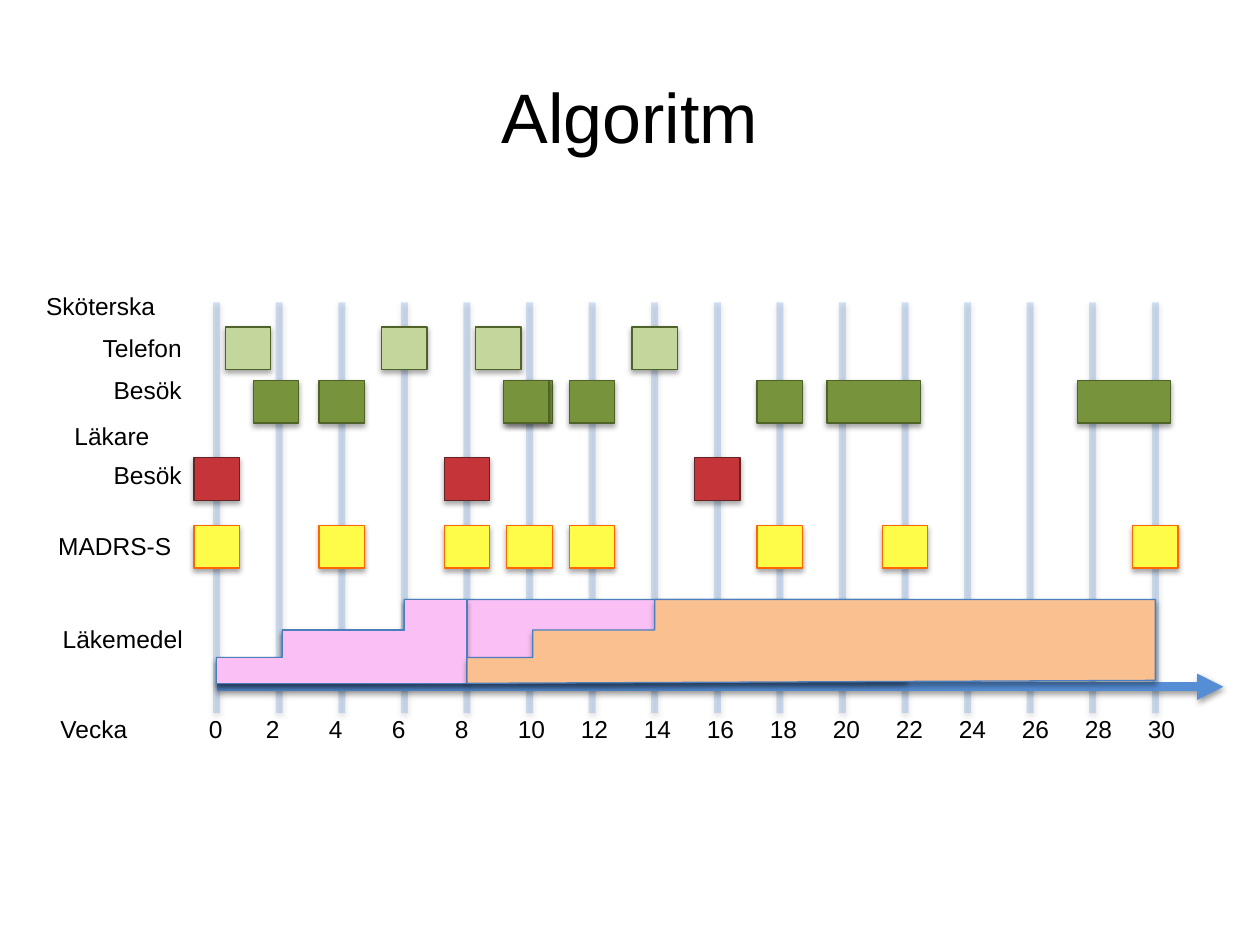
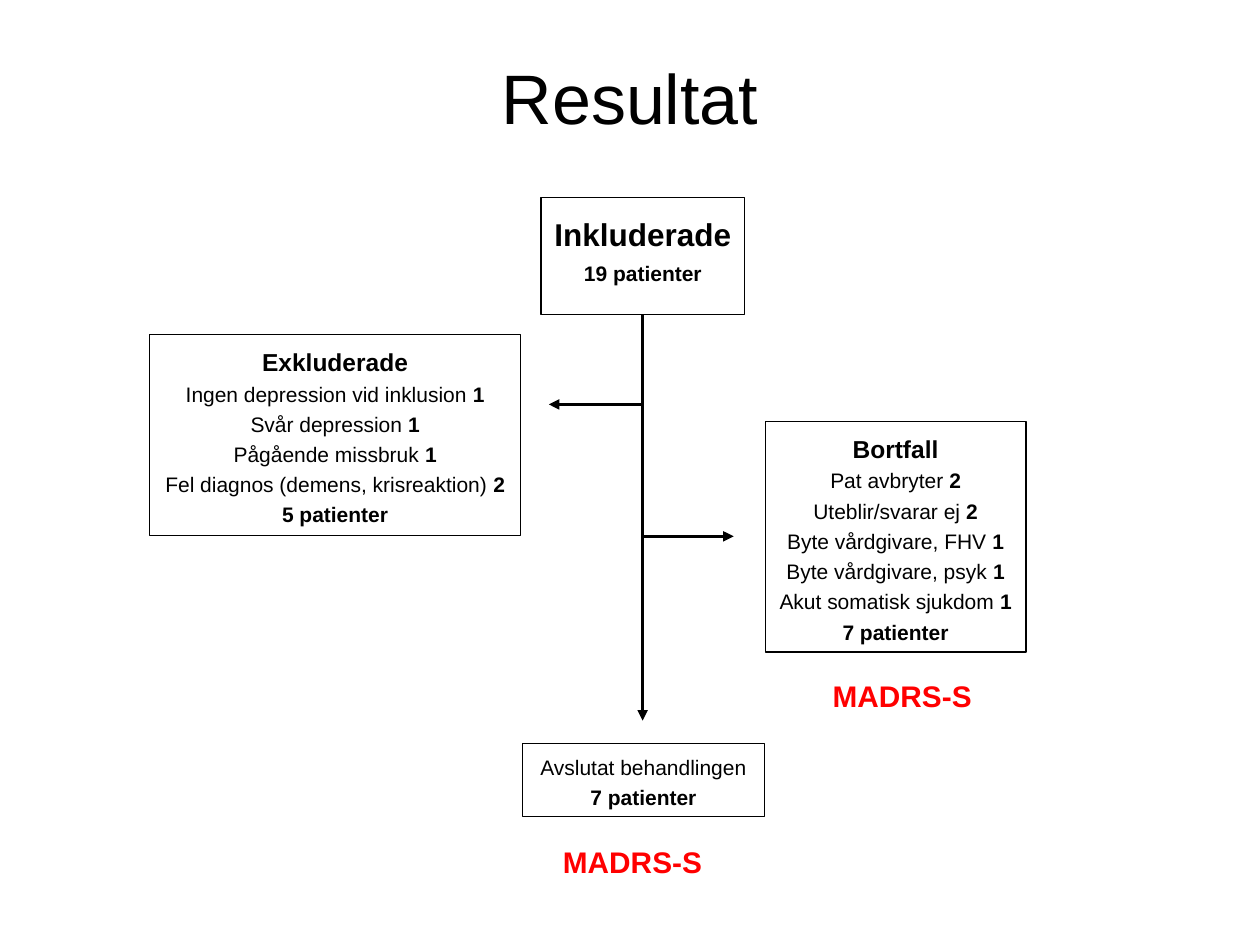
from lxml.etree import SubElement
from pptx import Presentation
from pptx.dml.color import RGBColor
from pptx.enum.shapes import MSO_CONNECTOR as Connector, MSO_SHAPE as Preset
from pptx.enum.text import PP_ALIGN as Align
from pptx.oxml.ns import qn
from pptx.util import Pt

COLORS = {
    "black": "000000", "red": "FF0000", "blue": "558ED5", "outline": "4B7EBC",
    "phone": "C3D69B", "nurse": "77933C", "nurse edge": "4F6228",
    "doctor": "C43439", "doctor edge": "632523",
    "scale": "FFFC49", "scale edge": "FF6600",
    "first drug": "FAC0F5", "second drug": "FAC090",
}
FONT = "Arial"

# Week scale and dose levels of the timeline
WEEK_ZERO, WEEK_WIDTH, LAST_WEEK = 123.8, 17.88, 30
MARKER_WIDTH, MARKER_HEIGHT = 26, 24.5
DOSE_BASE, DOSE_LOW, DOSE_MIDDLE, DOSE_FULL = 390.5, 375.8, 360, 342.6


def rgb(name):
    return RGBColor.from_string(COLORS[name])


def week_x(week):
    return WEEK_ZERO + week * WEEK_WIDTH


def write(paragraph, text, *, size=14, bold=False, color="black",
          align=Align.LEFT, spacing=None):
    paragraph.alignment = align
    if spacing:
        paragraph.line_spacing = spacing
    run = paragraph.add_run()
    run.text = text
    run.font.name, run.font.size, run.font.bold = FONT, Pt(size), bold
    run.font.color.rgb = rgb(color)


def add_label(slide, left, top, width, height, text, wrap=True, **text_format):
    label = slide.shapes.add_textbox(Pt(left), Pt(top), Pt(width), Pt(height))
    label.text_frame.word_wrap = wrap
    paragraph = label.text_frame.paragraphs[0]
    write(paragraph, text, **text_format)
    return paragraph


def add_title(slide, top, text):
    add_label(slide, 0, top, 720, 55.7, text, size=40, align=Align.CENTER)


def cast_shadow(effects, opacity, distance):
    shadow = SubElement(effects, qn("a:outerShdw"), blurRad=str(Pt(3.1)),
                        dist=str(Pt(distance)), dir="5400000", rotWithShape="0")
    tint = SubElement(shadow, qn("a:srgbClr"), val=COLORS["black"])
    SubElement(tint, qn("a:alpha"), val=str(opacity * 1000))


def paint(shape, fill, edge):
    shape.fill.solid()
    shape.fill.fore_color.rgb = rgb(fill)
    shape.line.color.rgb = rgb(edge)
    shape.line.width = Pt(0.75)
    shape.shadow.inherit = False
    cast_shadow(shape._element.spPr.find(qn("a:effectLst")), 35, 1.8)


def add_line(slide, start, end, *, color="black", width=2, opacity=None,
             arrow=False, shadow=False):
    line = slide.shapes.add_connector(Connector.STRAIGHT, *map(Pt, start + end))
    line.line.color.rgb = rgb(color)
    line.line.width = Pt(width)
    properties = line._element.spPr
    stroke = properties.find(qn("a:ln"))
    if opacity:
        tint = stroke.find(".//" + qn("a:srgbClr"))
        SubElement(tint, qn("a:alpha"), val=str(opacity * 1000))
    if arrow:
        SubElement(stroke, qn("a:tailEnd"), type="triangle")
    effects = SubElement(properties, qn("a:effectLst"))
    if shadow:
        cast_shadow(effects, 38, 1.6)


def add_markers(slide, top, weeks, fill, edge, width=MARKER_WIDTH):
    for week in weeks:
        marker = slide.shapes.add_shape(
            Preset.RECTANGLE, Pt(week_x(week) - width / 2), Pt(top),
            Pt(width), Pt(MARKER_HEIGHT))
        paint(marker, fill, edge)


def add_dose_steps(slide, start, end, fill, step=2.1, end_base=DOSE_BASE):
    """Stepwise dose increase from week start to week end."""
    middle, full = start + step, start + 6
    corners = [(start, DOSE_LOW), (middle, DOSE_LOW), (middle, DOSE_MIDDLE),
               (full, DOSE_MIDDLE), (full, DOSE_FULL), (end, DOSE_FULL),
               (end, end_base)]
    outline = slide.shapes.build_freeform(Pt(week_x(start)), Pt(DOSE_BASE))
    outline.add_line_segments([(Pt(week_x(week)), Pt(y)) for week, y in corners])
    paint(outline.convert_to_shape(), fill, "outline")


def add_flow_box(slide, left, top, width, height, rows, spacing=1.2):
    """Each row is a list of (text, size, bold) pieces."""
    box = slide.shapes.add_shape(Preset.RECTANGLE, Pt(left), Pt(top),
                                 Pt(width), Pt(height))
    box.fill.background()
    box.line.color.rgb = rgb("black")
    box.line.width = Pt(0.75)
    box.shadow.inherit = False
    frame = box.text_frame
    frame.word_wrap = False
    frame.vertical_anchor = 1  # top
    for index, row in enumerate(rows):
        paragraph = frame.add_paragraph() if index else frame.paragraphs[0]
        for text, size, bold in row:
            write(paragraph, text, size=size, bold=bold,
                  align=Align.CENTER, spacing=spacing)


def heading(text, size=14):
    return [(text, size, True)]


def reason(text, count):
    return [(text + " ", 12, False), (count, 12, True)]


def add_week_numbers(slide):
    weeks = range(0, LAST_WEEK + 1, 2)
    text = "\t".join(["Vecka", *map(str, weeks)])
    paragraph = add_label(slide, 27.4, 404.6, 671, 24.5, text)
    stops = SubElement(paragraph._p.get_or_add_pPr(), qn("a:tabLst"))
    for index in range(len(weeks)):
        position = 117.4 + 36 * (index - 1) if index else 84.8
        SubElement(stops, qn("a:tab"), pos=str(Pt(position)), algn="l")


def build_algorithm(slide):
    # Week grid and time axis
    for week in range(0, LAST_WEEK + 1, 2):
        add_line(slide, (week_x(week), 172.8), (week_x(week), 407.5),
                 color="blue", width=4, opacity=26, shadow=True)
    add_title(slide, 38.2, "Algoritm")
    add_week_numbers(slide)
    add_line(slide, (WEEK_ZERO, 392.4), (699.1, 392.4), color="blue", width=5,
             arrow=True, shadow=True)

    # Row labels, aligned to their right edge
    for text, right, top in [("Sköterska", 95.8, 162.7), ("Telefon", 111, 186.5),
                             ("Besök", 111, 211), ("Läkare", 92.5, 236.9),
                             ("Besök", 111, 259.2), ("MADRS-S", 105, 299.9),
                             ("Läkemedel", 111.6, 352.8)]:
        add_label(slide, right - 92, top, 92, 24.5, text, align=Align.RIGHT)

    # Contacts and ratings
    add_markers(slide, 186.8, [1, 6, 9, 14], "phone", "nurse edge")
    add_markers(slide, 217.3, [1.9, 4, 10, 9.9, 12, 18], "nurse", "nurse edge")
    add_markers(slide, 217.3, [21, 29], "nurse", "nurse edge", width=53.3)
    add_markers(slide, 261.4, [0, 8, 16], "doctor", "doctor edge")
    add_markers(slide, 300.2, [0, 4, 8, 10, 12, 18, 22, 30], "scale", "scale edge")

    # Medication
    add_dose_steps(slide, 0, 22, "first drug", end_base=388.8)
    add_dose_steps(slide, 0, 8, "first drug")
    add_dose_steps(slide, 8, 30, "second drug", end_base=388.8)


def build_result(slide):
    add_title(slide, 27.4, "Resultat")

    # Patient flow
    add_flow_box(slide, 309.2, 112.8, 116.3, 67, [
        heading("Inkluderade", 18), heading("19 patienter", 12)], spacing=1.3)
    add_flow_box(slide, 298.5, 424.8, 138.5, 41.8, [
        [("Avslutat behandlingen", 12, False)], heading("7 patienter", 12)])
    add_flow_box(slide, 85.5, 191.2, 212, 114.7, [
        heading("Exkluderade"),
        reason("Ingen depression vid inklusion", "1"),
        reason("Svår depression", "1"),
        reason("Pågående missbruk", "1"),
        reason("Fel diagnos (demens, krisreaktion)", "2"),
        heading("5 patienter", 12)])
    add_flow_box(slide, 437.3, 240.9, 149, 131.8, [
        heading("Bortfall"),
        reason("Pat avbryter", "2"),
        reason("Uteblir/svarar ej", "2"),
        reason("Byte vårdgivare, FHV", "1"),
        reason("Byte vårdgivare, psyk", "1"),
        reason("Akut somatisk sjukdom", "1"),
        heading("7 patienter", 12)])

    # Arrows from the main path
    main_x = 367.2
    for start, end in [((main_x, 179.5), (main_x, 411.8)),
                       ((main_x, 231.1), (313.6, 231.1)),
                       ((main_x, 306.5), (419.3, 306.5))]:
        add_line(slide, start, end, arrow=True)

    # Rating notes
    for left, top in [(468.7, 383.8), (314.6, 478.8)]:
        add_label(slide, left, top, 98.6, 28, "MADRS-S", wrap=False,
                  size=17, bold=True, color="red")


def main():
    deck = Presentation()
    deck.slide_width, deck.slide_height = Pt(720), Pt(540)
    blank = deck.slide_layouts[6]
    for build in (build_algorithm, build_result):
        build(deck.slides.add_slide(blank))
    deck.save("out.pptx")


if __name__ == "__main__":
    main()
